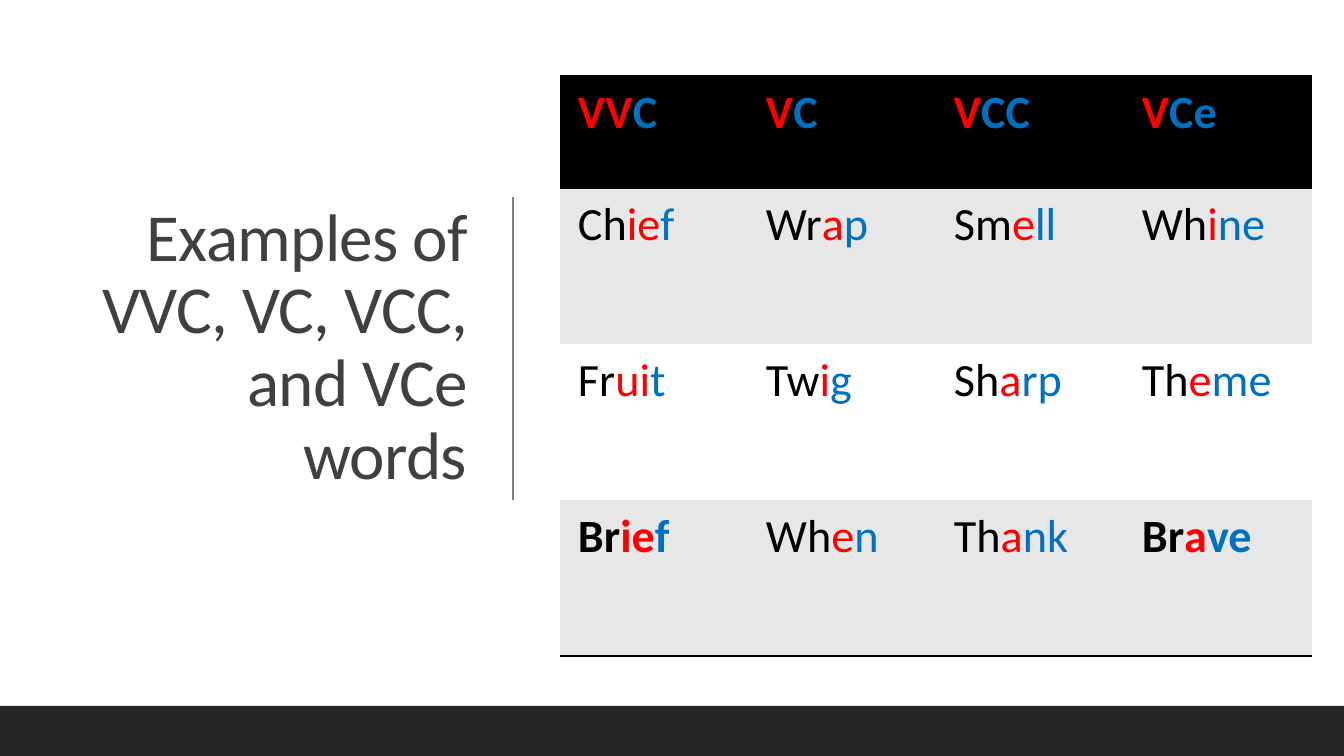
import pptx
import pptx.dml.color
import pptx.enum.shapes
import pptx.enum.text
import pptx.oxml
import pptx.oxml.ns
import pptx.util

TITLE = "Examples of VVC, VC, VCC, and VCe words"
WORDS = [
    [("", "VV", "C"), ("", "V", "C"), ("", "V", "CC"), ("", "V", "Ce")],
    [("Ch", "ie", "f"), ("Wr", "a", "p"), ("Sm", "e", "ll"), ("Wh", "i", "ne")],
    [("Fr", "ui", "t"), ("Tw", "i", "g"), ("Sh", "a", "rp"), ("Th", "e", "me")],
    [("Br", "ie", "f"), ("Wh", "e", "n"), ("Th", "a", "nk"), ("Br", "a", "ve")],
]
BOLD_WORDS = {"Brief", "Brave"}
PART_COLORS = ("000000", "FF0000", "0070C0")
ROW_FILLS = ("000000", "E7E7E7", "FFFFFF", "E7E7E7")
ROW_RULES = (("lnT", "lnB"), (), (), ("lnB",))
ROW_HEIGHTS = (112, 156, 156, 156)
COLUMN_WIDTH = 188
FONT = "Calibri"
PLAIN_TABLE = "{2D5ABB26-0587-4C30-8999-92F81FD0307C}"
SLIDE_WIDTH, SLIDE_HEIGHT = 1344, 756
FOOTER_TOP = 706
EMU_PER_PX = 914400 / 100.8


def px(*lengths):
    return [pptx.util.Emu(round(length * EMU_PER_PX)) for length in lengths]


def color(value):
    return pptx.dml.color.RGBColor.from_string(value)


def style(run, size, value, bold=False):
    run.font.name = FONT
    run.font.size = pptx.util.Pt(size)
    run.font.color.rgb = color(value)
    run.font.bold = bold


def add_title(slide):
    frame = slide.shapes.add_textbox(*px(71, 70, 406, 557)).text_frame
    frame.word_wrap = True
    frame.vertical_anchor = pptx.enum.text.MSO_ANCHOR.MIDDLE
    frame.text = TITLE
    heading = frame.paragraphs[0]
    heading.alignment = pptx.enum.text.PP_ALIGN.RIGHT
    heading.line_spacing = 0.9
    style(heading.runs[0], 48, "404040")
    heading.runs[0].font._element.set("spc", "-50")


def add_divider(slide):
    divider = slide.shapes.add_connector(
        pptx.enum.shapes.MSO_CONNECTOR.STRAIGHT, *px(513, 197, 513, 500))
    divider.line.color.rgb = color("808080")
    divider.line.width = pptx.util.Pt(1)
    pptx.oxml.ns.qn("a:effectLst")
    divider._element.spPr.append(pptx.oxml.parse_xml(
        f'<a:effectLst {pptx.oxml.ns.nsdecls("a")}/>'))


def add_footer(slide):
    footer = slide.shapes.add_shape(
        pptx.enum.shapes.MSO_SHAPE.RECTANGLE,
        *px(0, FOOTER_TOP, SLIDE_WIDTH, SLIDE_HEIGHT - FOOTER_TOP))
    footer.shadow.inherit = False
    footer.fill.solid()
    footer.fill.fore_color.rgb = color("262626")
    footer.line.fill.background()


def add_rules(cell, sides):
    for index, side in enumerate(sides):
        cell._tc.get_or_add_tcPr().insert(index, pptx.oxml.parse_xml(
            f'<a:{side} {pptx.oxml.ns.nsdecls("a")} w="25400"><a:solidFill>'
            f'<a:srgbClr val="000000"/></a:solidFill></a:{side}>'))


def fill_cell(cell, parts, row):
    cell.margin_left, cell.margin_right, cell.margin_top, cell.margin_bottom = px(18, 18, 9, 9)
    cell.fill.solid()
    cell.fill.fore_color.rgb = color(ROW_FILLS[row])
    add_rules(cell, ROW_RULES[row])
    bold = row == 0 or "".join(parts) in BOLD_WORDS
    for part, value in zip(parts, PART_COLORS):
        if part:
            run = cell.text_frame.paragraphs[0].add_run()
            run.text = part
            style(run, 33, value, bold)


def add_words(slide):
    columns = len(WORDS[0])
    table = slide.shapes.add_table(
        len(WORDS), columns,
        *px(560, 76, columns * COLUMN_WIDTH, sum(ROW_HEIGHTS))).table
    table._tbl.tblPr.find(pptx.oxml.ns.qn("a:tableStyleId")).text = PLAIN_TABLE
    table.horz_banding = False
    for column in table.columns:
        column.width = px(COLUMN_WIDTH)[0]
    for row, words in enumerate(WORDS):
        table.rows[row].height = px(ROW_HEIGHTS[row])[0]
        for column, parts in enumerate(words):
            fill_cell(table.cell(row, column), parts, row)


def main():
    deck = pptx.Presentation()
    deck.slide_width, deck.slide_height = px(SLIDE_WIDTH, SLIDE_HEIGHT)
    slide = deck.slides.add_slide(deck.slide_layouts[6])
    slide.background.fill.solid()
    slide.background.fill.fore_color.rgb = color("FFFFFF")
    add_title(slide)
    add_divider(slide)
    add_footer(slide)
    add_words(slide)
    deck.save("out.pptx")


if __name__ == "__main__":
    main()
